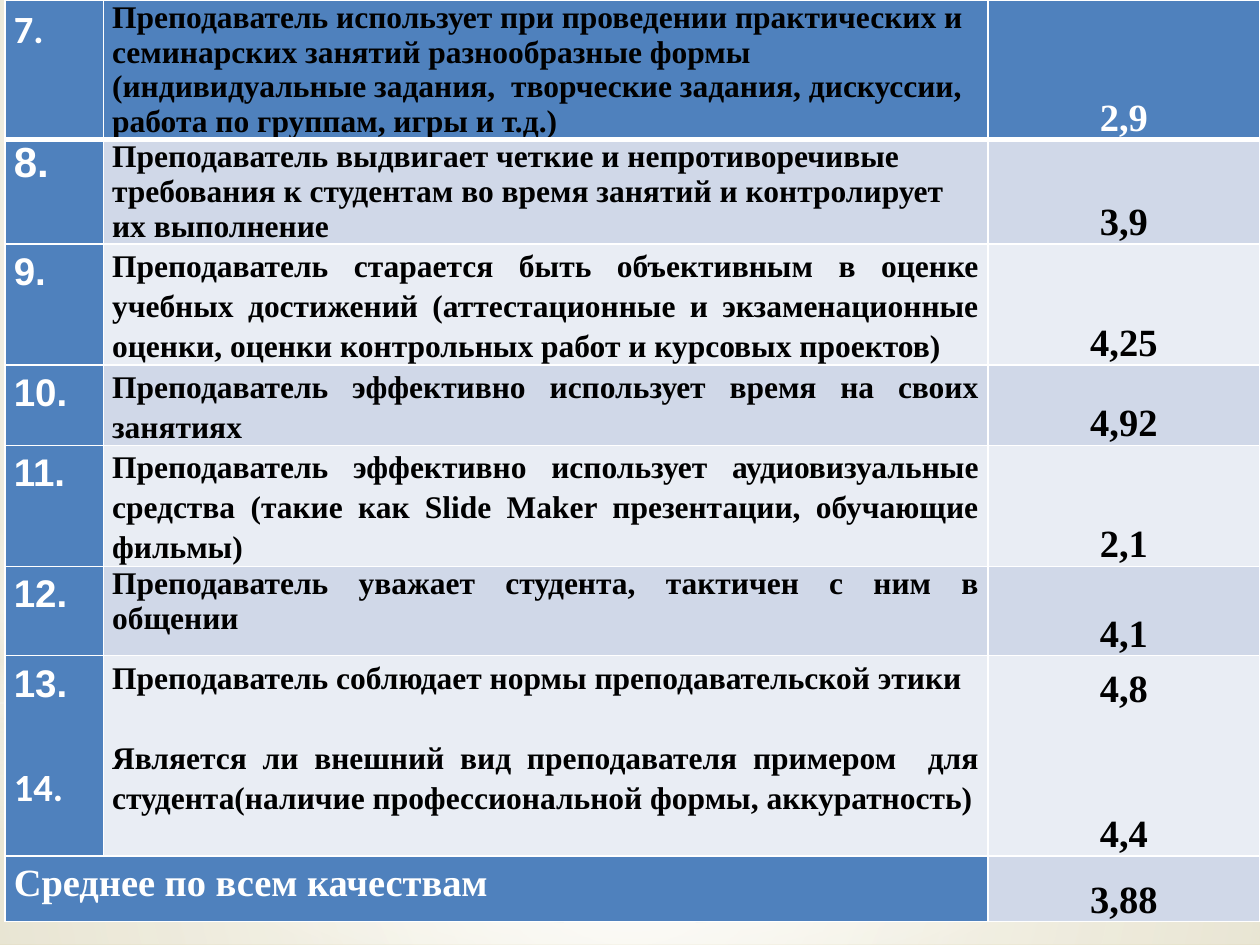
from lxml import etree
from pptx import Presentation
from pptx import util as u
from pptx.dml.color import RGBColor
from pptx.enum import shapes, text
from pptx.oxml import ns

WIDE, HIGH = 10, 7.5
BLUE = RGBColor(0x4F, 0x81, 0xBD)
DARK = RGBColor(0xD0, 0xD8, 0xE8)
PALE = RGBColor(0xE9, 0xED, 0xF4)
WHITE = RGBColor(0xFF, 0xFF, 0xFF)
BLACK = RGBColor(0, 0, 0)
SAND = RGBColor(0xE7, 0xE4, 0xD4)
GOLD = RGBColor(0xD5, 0xCC, 0x9F)
CREAM = RGBColor(0xEE, 0xEC, 0xE1)
SERIF = "Times New Roman"
MID = (50, 50, 50, 50)
COLS = (0.78, 7.02, 2.16)
LOOSE = 1.15

GLOWS = [
    (shapes.MSO_SHAPE.RECTANGLE, 0.744, 0.256, MID,
     [(0, WHITE, 91), (37, WHITE, 76), (100, CREAM, 79)]),
    (shapes.MSO_SHAPE.RECTANGLE, 0, 0.744, MID,
     [(0, WHITE, 89), (48, WHITE, 62), (100, CREAM, 79)]),
    (shapes.MSO_SHAPE.RECTANGLE, 0.549, 0.333, None,
     [(0, WHITE, 0), (29, WHITE, 30), (45, CREAM, 40),
      (55, WHITE, 26), (65, CREAM, 60), (100, WHITE, 0)]),
    (shapes.MSO_SHAPE.OVAL, 0.233, 0.744, MID,
     [(0, WHITE, 100), (56, WHITE, 0)]),
]

LEFT, FULL = text.PP_ALIGN.LEFT, text.PP_ALIGN.JUSTIFY
NUM = dict(font="Arial", size=22, color=WHITE, align=FULL, line=LOOSE)
BODY = dict(size=18, align=FULL, line=LOOSE)
FLUSH = dict(size=18, align=LEFT)
MARK = dict(size=22, align=text.PP_ALIGN.CENTER, line=LOOSE)

ROWS = [
    (1.1, ["7."], {**NUM, "font": "Calibri"},
     ["Преподаватель использует при проведении практических и семинарских "
      "занятий разнообразные формы (индивидуальные задания,  творческие "
      "задания, дискуссии, работа по группам, игры и т.д.) "],
     FLUSH, ["2,9"]),
    (0.83, ["8."], {**NUM, "size": 24, "align": LEFT, "line": 1},
     ["Преподаватель выдвигает четкие и непротиворечивые требования к "
      "студентам во время занятий и контролирует их выполнение "],
     FLUSH, ["3,9"]),
    (0.96, ["9.\u00a0"], NUM,
     ["Преподаватель старается быть объективным в оценке учебных достижений "
      "(аттестационные и экзаменационные оценки, оценки контрольных работ "
      "и курсовых проектов) "],
     BODY, ["4,25"]),
    (0.63, ["10.\u00a0"], NUM,
     ["Преподаватель эффективно использует время на своих занятиях "],
     BODY, ["4,92"]),
    (0.96, ["11.\u00a0"], NUM,
     ["Преподаватель эффективно использует аудиовизуальные средства "
      "(такие как Slide Maker презентации, обучающие фильмы)"],
     BODY, ["2,1"]),
    (0.71, ["12.\u00a0"], NUM,
     ["Преподаватель уважает студента, тактичен с ним в общении"],
     {**BODY, "line": 1}, ["4,1"]),
    (1.59, ["13.\u00a0", "14."], {**NUM, "gap": 30},
     ["Преподаватель соблюдает нормы преподавательской этики",
      "Является ли внешний вид преподавателя примером  для студента"
      "(наличие профессиональной формы, аккуратность)"],
     {**BODY, "gap": 23}, ["4,8", "4,4"]),
    (0.52, ["Среднее по всем качествам"], {**NUM, "font": SERIF},
     [], BODY, ["3,88"]),
]


def blend(box, stops, rect):
    old = box.find(ns.qn("a:solidFill"))
    grad = etree.Element(ns.qn("a:gradFill"), rotWithShape="1")
    steps = etree.SubElement(grad, ns.qn("a:gsLst"))
    for pos, color, alpha in stops:
        stop = etree.SubElement(steps, ns.qn("a:gs"), pos=str(pos * 1000))
        tint = etree.SubElement(stop, ns.qn("a:srgbClr"), val=str(color))
        etree.SubElement(tint, ns.qn("a:alpha"), val=str(alpha * 1000))
    if rect:
        ring = etree.SubElement(grad, ns.qn("a:path"))
        ring.set("path", "circle")
        sides = {k: str(v * 1000) for k, v in zip("ltrb", rect)}
        etree.SubElement(ring, ns.qn("a:fillToRect"), **sides)
    else:
        etree.SubElement(grad, ns.qn("a:lin"), ang="5400000", scaled="0")
    box.replace(old, grad)


def glow(slide, kind, top, tall, rect, stops):
    shape = slide.shapes.add_shape(
        kind, 0, u.Inches(top * HIGH), u.Inches(WIDE), u.Inches(tall * HIGH))
    shape.shadow.inherit = False
    shape.line.fill.background()
    shape.fill.solid()
    blend(shape.element.spPr, stops, rect)


def write(par, words, font=SERIF, size=18, color=BLACK, align=LEFT,
          line=1, gap=0):
    par.alignment = align
    par.line_spacing = line
    par.space_before = u.Pt(gap)
    run = par.add_run()
    run.text = words
    run.font.name = font
    run.font.size = u.Pt(size)
    run.font.bold = True
    run.font.color.rgb = color


def edge(cell, **sides):
    props = cell._tc.get_or_add_tcPr()
    for i, side in enumerate("LRTB"):
        width = u.Pt(sides.get(side, 1))
        line = etree.Element(ns.qn("a:ln" + side), w=str(width))
        fill = etree.SubElement(line, ns.qn("a:solidFill"))
        etree.SubElement(fill, ns.qn("a:srgbClr"), val=str(WHITE))
        props.insert(i, line)


def fill(cell, parts, color, form, low=False):
    cell.margin_left = cell.margin_right = u.Inches(0.07)
    cell.margin_top = cell.margin_bottom = 0
    if low:
        cell.vertical_anchor = text.MSO_ANCHOR.BOTTOM
    cell.fill.solid()
    cell.fill.fore_color.rgb = color
    frame = cell.text_frame
    for i, words in enumerate(parts):
        par = frame.add_paragraph() if i else frame.paragraphs[0]
        look = dict(form)
        if not i:
            look["gap"] = 0
        elif words == "14.":
            look["font"] = "Calibri"
        write(par, words, **look)


def grid(slide):
    high = sum(row[0] for row in ROWS)
    table = slide.shapes.add_table(
        len(ROWS), len(COLS), u.Inches(0.04), 0,
        u.Inches(sum(COLS)), u.Inches(high)).table
    for col, wide in zip(table.columns, COLS):
        col.width = u.Inches(wide)
    last = len(ROWS) - 1
    table.cell(last, 0).merge(table.cell(last, 1))
    for i, (tall, nums, look, body, form, marks) in enumerate(ROWS):
        table.rows[i].height = u.Inches(tall)
        band = DARK if i % 2 else PALE
        tone = band if i else BLUE
        score = {**MARK, "color": BLACK if i else WHITE, "gap": 55}
        fill(table.cell(i, 0), nums, BLUE, look)
        fill(table.cell(i, 1), body, tone, form)
        fill(table.cell(i, 2), marks, tone, score, low=True)
        for j in range(len(COLS)):
            edge(table.cell(i, j), T=3 if i == 1 else 1, B=1 if i else 3)


def main():
    deck = Presentation()
    deck.slide_width, deck.slide_height = u.Inches(WIDE), u.Inches(HIGH)
    slide = deck.slides.add_slide(deck.slide_layouts[6])
    slide.background.fill.solid()
    blend(slide.element.find(".//" + ns.qn("p:bgPr")),
          [(0, SAND, 100), (60, WHITE, 100), (100, GOLD, 100)],
          (20, 10, 20, 60))
    for item in GLOWS:
        glow(slide, *item)
    grid(slide)
    deck.save("out.pptx")


main()
